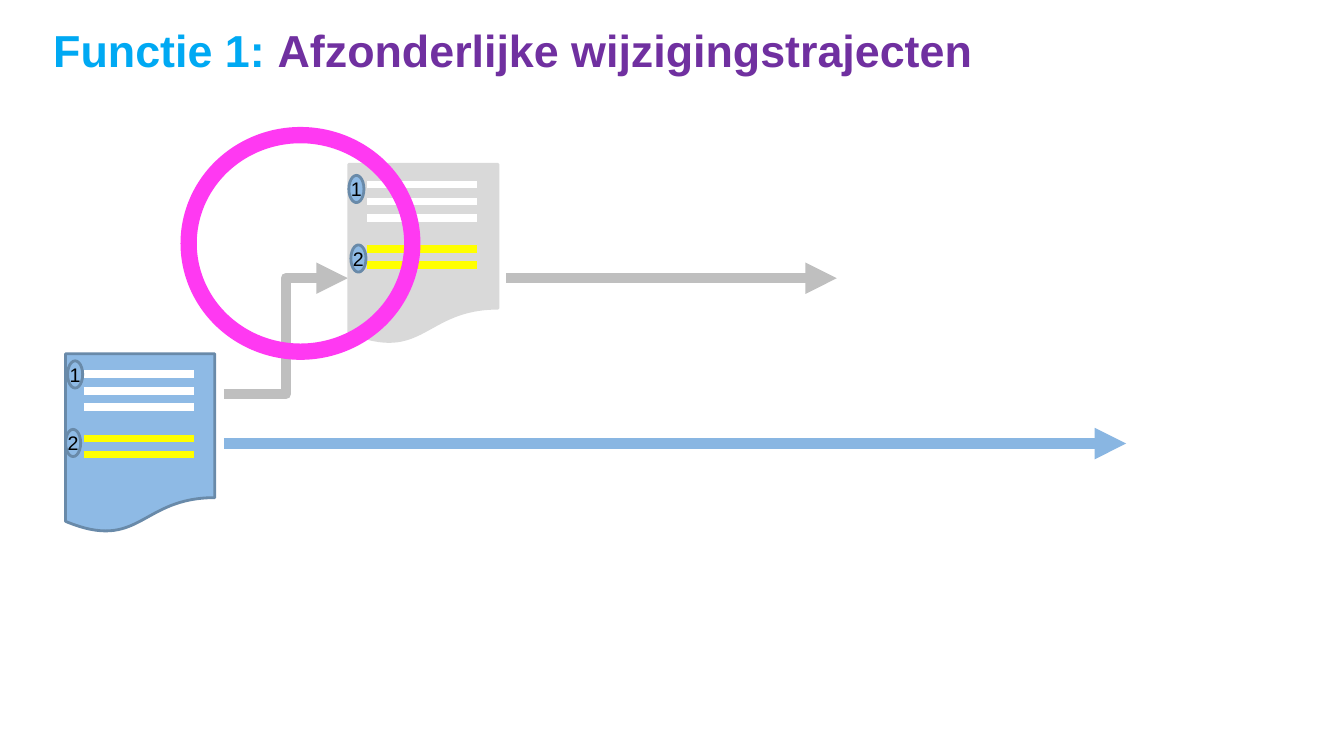
from dataclasses import dataclass

from lxml import etree
from pptx import Presentation
from pptx.dml.color import RGBColor
from pptx.enum import shapes, text
from pptx.oxml import ns
from pptx.util import Inches, Pt


@dataclass(frozen=True)
class Theme:
    font: str = "Arial"
    title_size: float = 32
    badge_size: float = 14
    outline: float = 2
    text_line: float = 5.5
    arrow: float = 7.5
    cyan: str = "00A9F3"
    purple: str = "7030A0"
    black: str = "000000"
    white: str = "FFFFFF"
    yellow: str = "FFFF00"
    blue: str = "8EBAE5"
    blue_edge: str = "698AA9"
    blue_arrow: str = "89B6E2"
    gray: str = "D9D9D9"
    gray_arrow: str = "BFBFBF"
    magenta: str = "FF39F2"


THEME = Theme()
STRAIGHT = shapes.MSO_CONNECTOR.STRAIGHT
ELBOW = shapes.MSO_CONNECTOR.ELBOW
# Vertical offset of each text line inside a document, with its colour
DOCUMENT_LINES = [
    (0.2, THEME.white), (0.37, THEME.white), (0.53, THEME.white),
    (0.84, THEME.yellow), (1.0, THEME.yellow),
]


def rgb(color):
    return RGBColor.from_string(color)


def add_title(slide, parts):
    title = slide.shapes.add_textbox(
        Inches(0.43), Inches(0.13), Inches(10.97), Inches(0.79))
    frame = title.text_frame
    frame.word_wrap = True
    frame.margin_top = Inches(0.1)
    heading = frame.paragraphs[0]
    heading.font.name = THEME.font
    heading.font.size = Pt(THEME.title_size)
    heading.font.bold = True
    for wording, color in parts:
        run = heading.add_run()
        run.text = wording
        run.font.color.rgb = rgb(color)


def add_line(slide, start, end, color, width, kind=STRAIGHT):
    line = slide.shapes.add_connector(
        kind, *(Inches(value) for value in (*start, *end)))
    line.line.color.rgb = rgb(color)
    line.line.width = Pt(width)
    etree.SubElement(line._element.spPr, ns.qn("a:effectLst"))
    return line


def add_arrow(slide, start, end, color, kind=STRAIGHT):
    arrow = add_line(slide, start, end, color, THEME.arrow, kind)
    outline = arrow.line._get_or_add_ln()
    etree.SubElement(outline, ns.qn("a:round"))
    etree.SubElement(outline, ns.qn("a:tailEnd"), type="triangle")


def add_filled(slide, kind, left, top, width, height, fill, edge=None):
    """Add a flat preset shape, without an outline if no edge colour is given."""
    shape = slide.shapes.add_shape(
        kind, Inches(left), Inches(top), Inches(width), Inches(height))
    shape.shadow.inherit = False
    shape.fill.solid()
    shape.fill.fore_color.rgb = rgb(fill)
    if edge:
        shape.line.color.rgb = rgb(edge)
        shape.line.width = Pt(THEME.outline)
    else:
        shape.line.fill.background()
    return shape


def add_document(slide, left, top, fill, edge):
    add_filled(slide, shapes.MSO_SHAPE.FLOWCHART_DOCUMENT,
               left, top, 1.48, 1.78, fill, edge)
    for offset, color in DOCUMENT_LINES:
        y = top + offset
        add_line(slide, (left + 0.18, y), (left + 1.27, y),
                 color, THEME.text_line)


def add_badge(slide, number, left, top):
    badge = add_filled(slide, shapes.MSO_SHAPE.OVAL, left, top, 0.15, 0.27,
                       THEME.blue, THEME.blue_edge)
    frame = badge.text_frame
    frame.word_wrap = False
    frame.margin_left = frame.margin_right = 0
    frame.margin_top = frame.margin_bottom = 0
    frame.vertical_anchor = text.MSO_ANCHOR.MIDDLE
    label = frame.paragraphs[0]
    label.text = number
    label.alignment = text.PP_ALIGN.CENTER
    label.font.name = THEME.font
    label.font.size = Pt(THEME.badge_size)
    label.font.color.rgb = rgb(THEME.black)


def main():
    deck = Presentation()
    deck.slide_width, deck.slide_height = Inches(13.33), Inches(7.5)
    slide = deck.slides.add_slide(deck.slide_layouts[6])

    add_title(slide, [("Functie 1: ", THEME.cyan),
                      ("Afzonderlijke wijzigingstrajecten", THEME.purple)])

    add_arrow(slide, (2.22, 4.4), (11.17, 4.4), THEME.blue_arrow)
    add_arrow(slide, (2.22, 3.91), (3.45, 2.76), THEME.gray_arrow, ELBOW)
    add_arrow(slide, (5.02, 2.76), (8.3, 2.76), THEME.gray_arrow)

    add_document(slide, 0.65, 3.51, THEME.blue, THEME.blue_edge)
    add_document(slide, 3.46, 1.63, THEME.gray, THEME.gray)

    for number, left, top in [("1", 3.46, 1.74), ("2", 3.48, 2.43),
                              ("2", 0.65, 4.26), ("1", 0.67, 3.58)]:
        add_badge(slide, number, left, top)

    highlight = add_filled(slide, shapes.MSO_SHAPE.DONUT,
                           1.79, 1.26, 2.38, 2.31, THEME.magenta)
    highlight.adjustments[0] = 0.07

    deck.save("out.pptx")


if __name__ == "__main__":
    main()
